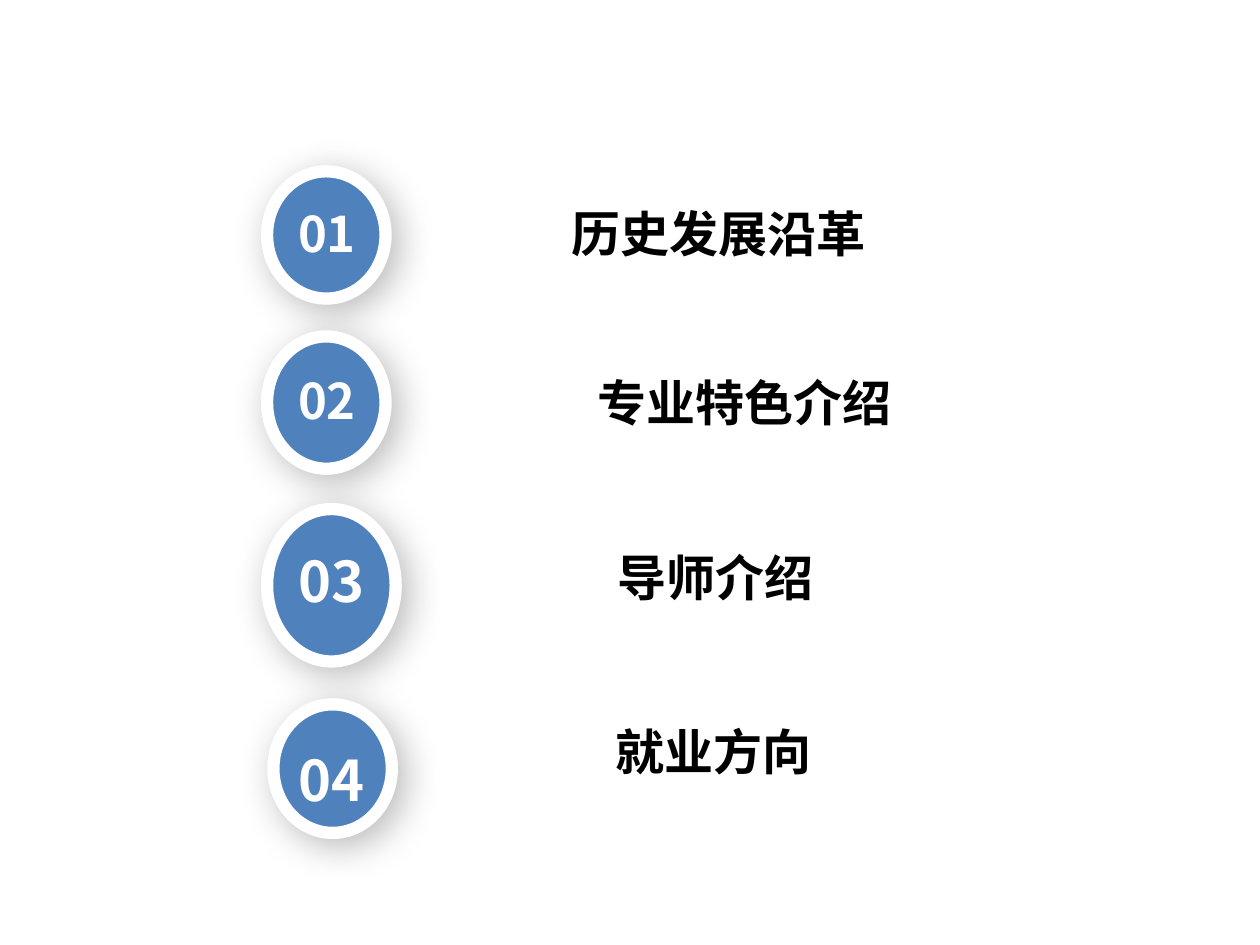
from dataclasses import dataclass

from lxml import etree
from pptx import Presentation, util as u
from pptx.dml.color import RGBColor
from pptx.enum import shapes, text
from pptx.oxml import ns


@dataclass(frozen=True)
class Theme:
    font: str = "Noto Sans CJK SC"
    ink: str = "000000"
    accent: str = "4F81BD"
    white: str = "FFFFFF"
    shadow: str = "000000"
    shadow_alpha: int = 28
    shadow_blur: int = 22
    shadow_distance: int = 6
    shadow_angle: int = 45
    ring_width: int = 7
    heading_size: int = 28


class AgendaSlide:
    def __init__(self, slide, theme):
        self.slide = slide
        self.theme = theme

    def label(self, bounds, wording, size, color):
        box = self.slide.shapes.add_textbox(*map(u.Inches, bounds))
        frame_format = {
            "word_wrap": True,
            "auto_size": text.MSO_AUTO_SIZE.SHAPE_TO_FIT_TEXT,
        }
        for name, value in frame_format.items():
            setattr(box.text_frame, name, value)
        paragraph = box.text_frame.paragraphs[0]
        paragraph.alignment = text.PP_ALIGN.CENTER
        run = paragraph.add_run()
        run.text = wording
        font_format = {"name": self.theme.font, "size": u.Pt(size), "bold": True}
        for name, value in font_format.items():
            setattr(run.font, name, value)
        run.font.color.rgb = RGBColor.from_string(color)
        east_asian = etree.SubElement(run.font._element, ns.qn("a:ea"))
        east_asian.set("typeface", self.theme.font)

    def badge(self, bounds):
        oval = self.slide.shapes.add_shape(
            shapes.MSO_SHAPE.OVAL, *map(u.Inches, bounds))
        oval.fill.solid()
        oval.fill.fore_color.rgb = RGBColor.from_string(self.theme.accent)
        oval.line.color.rgb = RGBColor.from_string(self.theme.white)
        oval.line.width = u.Pt(self.theme.ring_width)
        self.soft_shadow(oval)

    def soft_shadow(self, shape):
        """Replace the inherited shadow with the theme's blurred outer shadow."""
        shape.shadow.inherit = False
        effects = shape._element.spPr.find(ns.qn("a:effectLst"))
        shadow = etree.SubElement(effects, ns.qn("a:outerShdw"), {
            "blurRad": str(u.Pt(self.theme.shadow_blur)),
            "dist": str(u.Pt(self.theme.shadow_distance)),
            "dir": str(self.theme.shadow_angle * 60000),
            "algn": "ctr",
            "rotWithShape": "0",
        })
        color = etree.SubElement(shadow, ns.qn("a:srgbClr"), val=self.theme.shadow)
        etree.SubElement(color, ns.qn("a:alpha"),
                         val=str(self.theme.shadow_alpha * 1000))


# heading, heading bounds, badge bounds, number bounds, number size
AGENDA = [
    ("历史发展沿革", (3.49, 1.57, 4.42, 0.57),
     (2.12, 1.36, 0.94, 1.01), (2.24, 1.57, 0.71, 0.57), 28),
    ("专业特色介绍", (3.14, 2.91, 5.54, 0.57),
     (2.12, 2.67, 0.94, 1.05), (2.24, 2.89, 0.71, 0.57), 28),
    ("导师介绍", (3.77, 4.3, 3.82, 0.57),
     (2.12, 4.04, 1.02, 1.21), (2.25, 4.29, 0.77, 0.64), 32),
    ("就业方向", (3.6, 5.68, 4.12, 0.57),
     (2.17, 5.59, 0.94, 1.02), (2.2, 5.87, 0.86, 0.64), 32),
]


def main():
    presentation = Presentation()
    presentation.slide_width = u.Inches(10)
    presentation.slide_height = u.Inches(7.5)
    theme = Theme()
    blank_layout = presentation.slide_layouts[6]
    agenda = AgendaSlide(presentation.slides.add_slide(blank_layout), theme)
    for number, entry in enumerate(AGENDA, start=1):
        heading, heading_bounds, badge_bounds, number_bounds, number_size = entry
        agenda.label(heading_bounds, heading, theme.heading_size, theme.ink)
        agenda.badge(badge_bounds)
        agenda.label(number_bounds, f"{number:02d}", number_size, theme.white)
    presentation.save("out.pptx")


if __name__ == "__main__":
    main()
